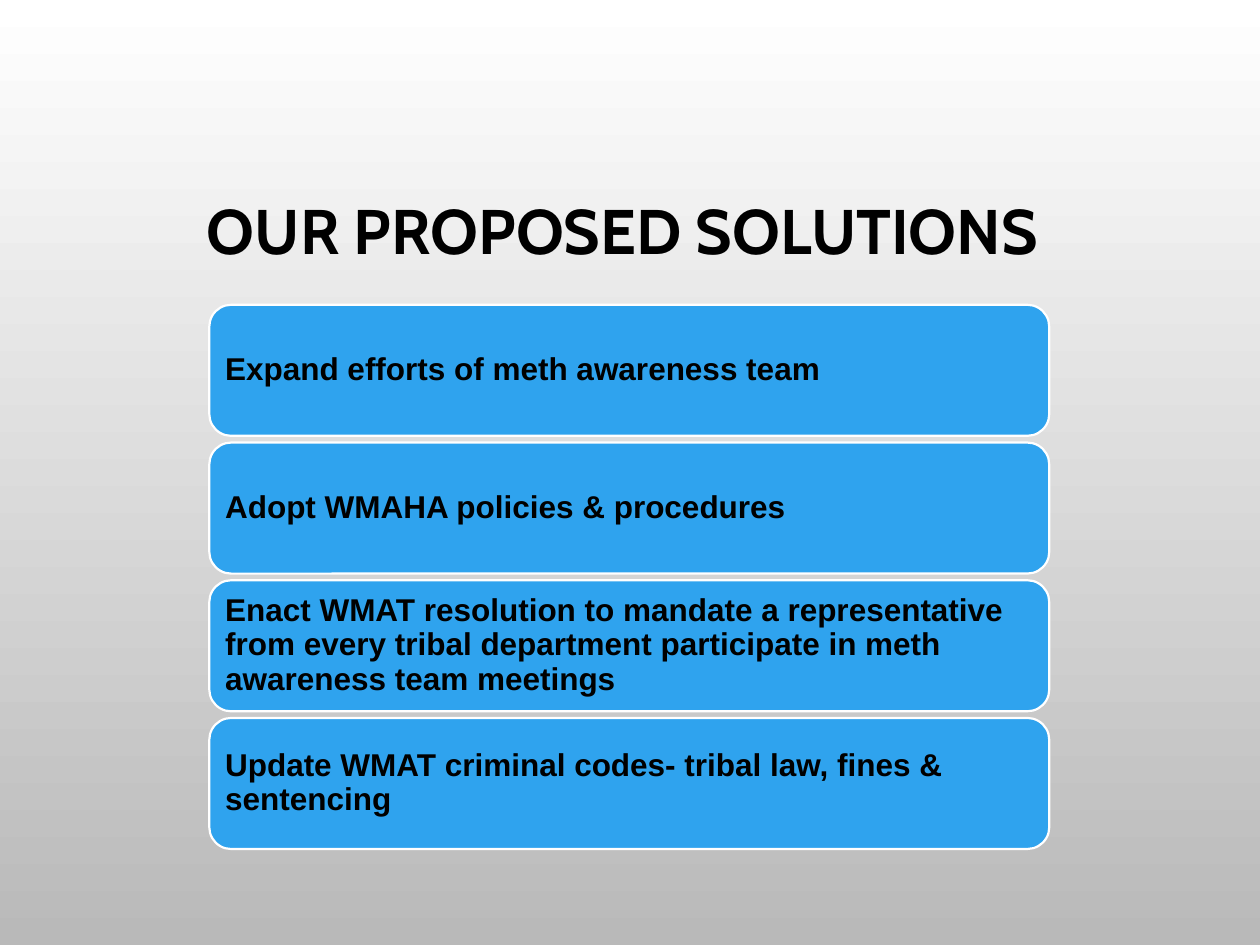
import pptx
import pptx.dml.color
import pptx.enum.shapes
import pptx.enum.text
import pptx.util

Pt = pptx.util.Pt
Align = pptx.enum.text.PP_ALIGN
Anchor = pptx.enum.text.MSO_ANCHOR

COLOURS = {"text": "000000", "card": "2FA3EE", "outline": "FFFFFF",
           "top": "FFFFFF", "bottom": "B9B9B9"}


def colour(name):
    return pptx.dml.color.RGBColor.from_string(COLOURS[name])


def write(shape, text, font, size, align, anchor, inset):
    frame = shape.text_frame
    frame.word_wrap = True
    frame.vertical_anchor = anchor
    frame.margin_left = frame.margin_right = Pt(inset)
    frame.margin_top = frame.margin_bottom = Pt(inset)
    para = frame.paragraphs[0]
    para.alignment = align
    para.line_spacing = 0.9
    span = para.add_run()
    span.text = text
    span.font.name = font
    span.font.size = Pt(size)
    span.font.bold = True
    span.font.color.rgb = colour("text")


deck = pptx.Presentation()
deck.slide_width, deck.slide_height = Pt(720), Pt(540)
page = deck.slides.add_slide(deck.slide_layouts[6])

backdrop = page.background.fill
backdrop.gradient()
backdrop.gradient_angle = 270
for stop, name, position in zip(backdrop.gradient_stops, ("top", "bottom"), (0, 1)):
    stop.color.rgb = colour(name)
    stop.position = position

title = page.shapes.add_textbox(Pt(54), Pt(116.5), Pt(611.5), Pt(40.5))
write(title, "OUR PROPOSED SOLUTIONS ", font="Cabin", size=36,
      align=Align.CENTER, anchor=Anchor.BOTTOM, inset=3.6)

solutions = [
    "Expand efforts of meth awareness team",
    "Adopt WMAHA policies & procedures",
    "Enact WMAT resolution to mandate a representative from every tribal "
    "department participate in meth awareness team meetings",
    "Update WMAT criminal codes- tribal law, fines & sentencing",
]
for index, solution in enumerate(solutions):
    card = page.shapes.add_shape(
        pptx.enum.shapes.MSO_SHAPE.ROUNDED_RECTANGLE,
        Pt(119.6), Pt(174.2 + 78.7 * index), Pt(480), Pt(74.9))
    card.shadow.inherit = False
    card.fill.solid()
    card.fill.fore_color.rgb = colour("card")
    card.line.color.rgb = colour("outline")
    card.line.width = Pt(1.25)
    write(card, solution, font="Arial", size=18,
          align=Align.LEFT, anchor=Anchor.MIDDLE, inset=5.4)

deck.save("out.pptx")
